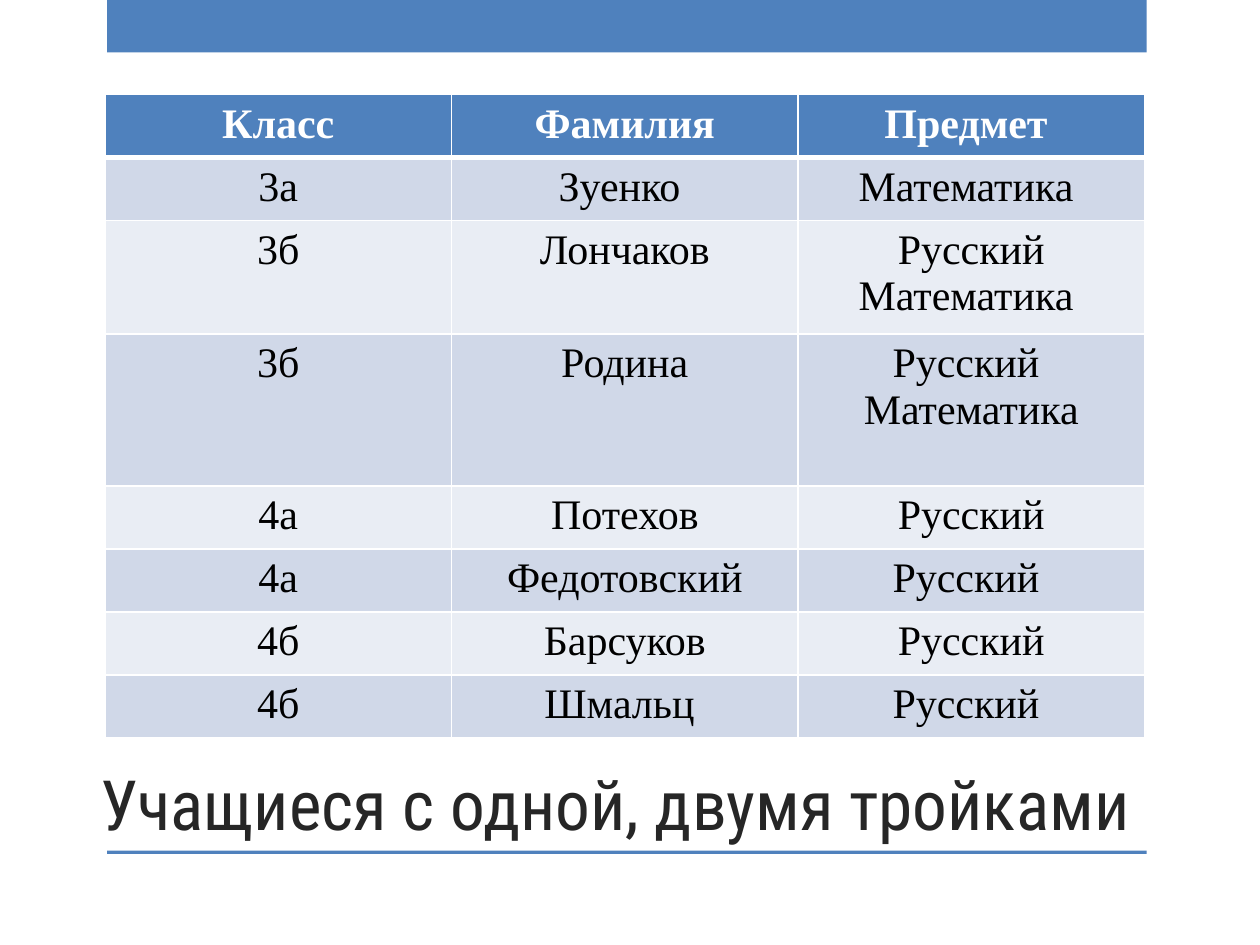
from dataclasses import dataclass

from lxml import etree
from pptx import Presentation
from pptx import util as u
from pptx.dml import color
from pptx.enum import shapes, text
from pptx.oxml import ns


@dataclass(frozen=True)
class Theme:
    accent: str = "4F81BD"
    bands: tuple = ("D0D8E8", "E9EDF4")
    white: str = "FFFFFF"
    black: str = "000000"
    title_color: str = "262626"
    title_font: str = "Roboto Condensed"
    table_font: str = "Times New Roman"
    title_size: float = 39.6
    table_size: float = 24
    thin: float = 1
    thick: float = 3


class SlideBuilder:
    def __init__(self, slide, theme):
        self.slide = slide
        self.theme = theme

    def fill(self, target, value):
        target.fill.solid()
        target.fill.fore_color.rgb = color.RGBColor.from_string(value)

    def format_text(self, frame, font, size, value, bold=False):
        for paragraph in frame.paragraphs:
            paragraph.alignment = text.PP_ALIGN.CENTER
            for run in paragraph.runs:
                run.font.name = font
                run.font.size = u.Pt(size)
                run.font.bold = bold
                run.font.color.rgb = color.RGBColor.from_string(value)

    def bar(self, left, top, width, height):
        shape = self.slide.shapes.add_shape(
            shapes.MSO_SHAPE.RECTANGLE, u.Pt(left), u.Pt(top), u.Pt(width), u.Pt(height))
        shape.shadow.inherit = False
        self.fill(shape, self.theme.accent)
        shape.line.fill.background()

    def title(self, wording, left, top, width, height):
        box = self.slide.shapes.add_textbox(u.Pt(left), u.Pt(top), u.Pt(width), u.Pt(height))
        frame = box.text_frame
        frame.word_wrap = True
        frame.vertical_anchor = text.MSO_ANCHOR.BOTTOM
        frame.text = wording
        self.format_text(frame, self.theme.title_font, self.theme.title_size, self.theme.title_color)

    def borders(self, cell, top, bottom):
        properties = cell._tc.get_or_add_tcPr()
        widths = {"L": self.theme.thin, "R": self.theme.thin, "T": top, "B": bottom}
        for index, (side, width) in enumerate(widths.items()):
            line = etree.Element(ns.qn(f"a:ln{side}"), w=str(u.Pt(width)))
            solid = etree.SubElement(line, ns.qn("a:solidFill"))
            etree.SubElement(solid, ns.qn("a:srgbClr"), val=self.theme.white)
            properties.insert(index, line)

    def table(self, rows, heights, left, top, column_width):
        theme = self.theme
        columns = len(rows[0])
        table = self.slide.shapes.add_table(
            len(rows), columns, u.Pt(left), u.Pt(top),
            u.Pt(column_width * columns), u.Pt(sum(heights))).table
        for column in table.columns:
            column.width = u.Pt(column_width)
        for number, (values, height) in enumerate(zip(rows, heights)):
            header = number == 0
            table.rows[number].height = u.Pt(height)
            for cell, value in zip(table.rows[number].cells, values):
                cell.text_frame.text = value
                self.format_text(cell.text_frame, theme.table_font, theme.table_size,
                                 theme.white if header else theme.black, header)
                self.fill(cell, theme.accent if header else theme.bands[(number - 1) % 2])
                self.borders(cell, theme.thick if number == 1 else theme.thin,
                             theme.thick if header else theme.thin)


ROWS = [
    ("Класс", "Фамилия", "Предмет "),
    ("3а", "Зуенко ", "Математика "),
    ("3б", "Лончаков", "Русский\nМатематика "),
    ("3б", "Родина", "Русский \nМатематика"),
    ("4а", "Потехов", "Русский"),
    ("4а", "Федотовский", "Русский "),
    ("4б", "Барсуков", "Русский"),
    ("4б", "Шмальц ", "Русский "),
]
SINGLE, DOUBLE, TRIPLE = 33.8, 60.4, 86.8
HEIGHTS = [SINGLE] * 2 + [DOUBLE, TRIPLE] + [SINGLE] * 4


def main():
    presentation = Presentation()
    presentation.slide_width = u.Pt(720)
    presentation.slide_height = u.Pt(540)
    slide = presentation.slides.add_slide(presentation.slide_layouts[6])
    builder = SlideBuilder(slide, Theme())
    builder.bar(61.2, 0, 594, 30)
    builder.bar(61.2, 486, 594, 2)
    builder.title("Учащиеся с одной, двумя тройками", 14.4, 388.8, 674.6, 97.2)
    builder.table(ROWS, HEIGHTS, 60, 54, 198)
    presentation.save("out.pptx")


if __name__ == "__main__":
    main()
